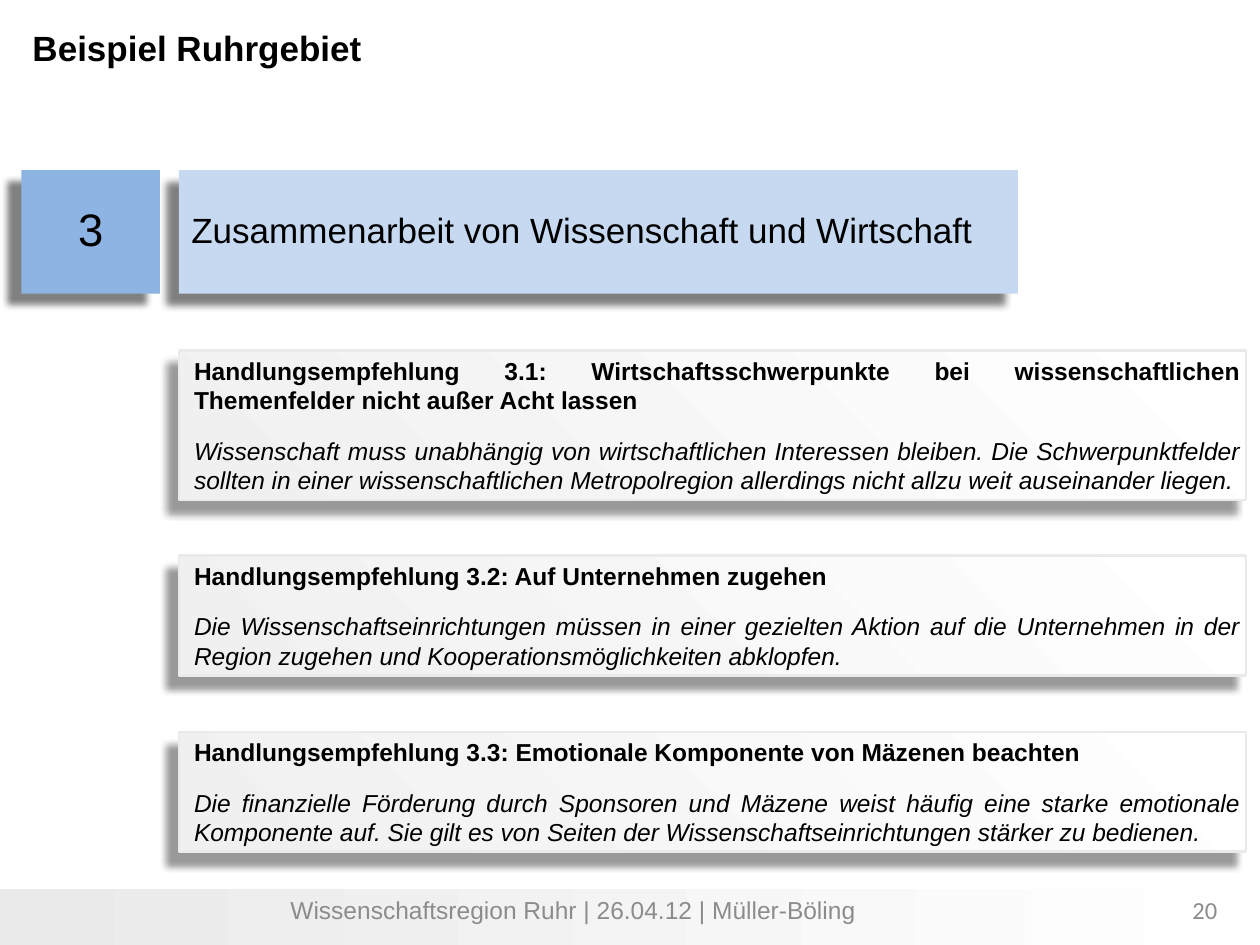
from lxml import etree
from pptx import Presentation
from pptx.dml.color import RGBColor
from pptx.enum import shapes, text
from pptx.oxml import ns
from pptx.util import Inches, Pt

ALIGN = text.PP_ALIGN
RECOMMENDATIONS = [
    (2.78, 1.19,
     "Handlungsempfehlung 3.1: Wirtschaftsschwerpunkte bei wissenschaftlichen "
     "Themenfelder nicht außer Acht lassen",
     "Wissenschaft muss unabhängig von wirtschaftlichen Interessen bleiben. "
     "Die Schwerpunktfelder sollten in einer wissenschaftlichen Metropolregion "
     "allerdings nicht allzu weit auseinander liegen."),
    (4.41, 0.95,
     "Handlungsempfehlung 3.2: Auf Unternehmen zugehen",
     "Die Wissenschaftseinrichtungen müssen in einer gezielten Aktion auf die "
     "Unternehmen in der Region zugehen und Kooperationsmöglichkeiten abklopfen."),
    (5.81, 0.95,
     "Handlungsempfehlung 3.3: Emotionale Komponente von Mäzenen beachten",
     "Die finanzielle Förderung durch Sponsoren und Mäzene weist häufig eine "
     "starke emotionale Komponente auf. Sie gilt es von Seiten der "
     "Wissenschaftseinrichtungen stärker zu bedienen."),
]


def color(value):
    return RGBColor.from_string(value)


def write(para, words, size, align=ALIGN.LEFT, font="Arial", ink="000000",
          bold=False, italic=False):
    para.text = words
    para.alignment = align
    para.font.name = font
    para.font.size = Pt(size)
    para.font.color.rgb = color(ink)
    para.font.bold = bold
    para.font.italic = italic


def add_text(page, area, words, size, **style):
    box = page.shapes.add_textbox(*map(Inches, area))
    box.text_frame.word_wrap = True
    para = box.text_frame.paragraphs[0]
    write(para, words, size, **style)
    return para


def add_rectangle(page, area):
    box = page.shapes.add_shape(shapes.MSO_SHAPE.RECTANGLE, *map(Inches, area))
    box.shadow.inherit = False
    box.line.fill.background()
    box.text_frame.word_wrap = True
    box.text_frame.vertical_anchor = text.MSO_ANCHOR.MIDDLE
    return box


def fill_gradient(box, start, end, angle):
    """Fill from start to end; the angle runs counter-clockwise."""
    box.fill.gradient()
    box.fill.gradient_angle = angle
    for stop, value, position in zip(box.fill.gradient_stops, (start, end), (0, 1)):
        stop.color.rgb = color(value)
        stop.position = position


def add_shadow(box, opacity, direction):
    """Cast a soft black shadow; opacity in percent, direction in degrees."""
    effects = box._element.spPr.find(ns.qn("a:effectLst"))
    shadow = etree.SubElement(
        effects, ns.qn("a:outerShdw"), blurRad=str(Pt(4)), dist=str(Pt(10)),
        dir=str(direction * 60000), algn="tr", rotWithShape="0")
    black = etree.SubElement(shadow, ns.qn("a:srgbClr"), val="000000")
    etree.SubElement(black, ns.qn("a:alpha"), val=str(opacity * 1000))


def add_heading(page, area, fill, words, size, align):
    box = add_rectangle(page, area)
    box.fill.solid()
    box.fill.fore_color.rgb = color(fill)
    add_shadow(box, 49, 140)
    para = box.text_frame.paragraphs[0]
    write(para, words, size, align)
    para.line_spacing = 0.9


def add_recommendation(page, top, height, title, body):
    box = add_rectangle(page, (1.42, top, 8.47, height))
    fill_gradient(box, "F0F0F0", "FFFFFF", 45)
    box.line.color.rgb = color("EAEAEA")
    box.line.width = Pt(1.5)
    add_shadow(box, 40, 135)
    frame = box.text_frame
    frame.margin_left = Inches(0.12)
    frame.margin_top = frame.margin_right = frame.margin_bottom = Inches(0.04)
    write(frame.paragraphs[0], title, 14, ALIGN.JUSTIFY, bold=True)
    write(frame.add_paragraph(), body, 14, ALIGN.JUSTIFY, italic=True)
    for para in frame.paragraphs:
        para.space_after = Pt(12)


def add_footer(page):
    band = add_rectangle(page, (0, 7.06, 10, 0.44))
    fill_gradient(band, "FFFFFF", "EAEAEA", 180)
    add_text(page, (0.16, 7.05, 8.78, 0.52),
             "Wissenschaftsregion Ruhr | 26.04.12 | Müller-Böling", 14,
             align=ALIGN.CENTER, ink="8C8C8C")
    add_text(page, (7.43, 7.05, 2.33, 0.52), "20", 14,
             align=ALIGN.RIGHT, font="Calibri", ink="8C8C8C")


def main():
    deck = Presentation()
    deck.slide_width, deck.slide_height = Inches(10), Inches(7.5)
    page = deck.slides.add_slide(deck.slide_layouts[6])
    add_footer(page)
    title = add_text(page, (0.16, 0.16, 7.5, 0.7), "Beispiel Ruhrgebiet", 20, bold=True)
    title.space_before = Pt(4)
    add_heading(page, (1.42, 1.35, 6.66, 0.98), "C6D9F1",
                "Zusammenarbeit von Wissenschaft und Wirtschaft", 20, ALIGN.LEFT)
    add_heading(page, (0.17, 1.35, 1.1, 0.98), "8EB4E3", "3", 26, ALIGN.CENTER)
    for recommendation in RECOMMENDATIONS:
        add_recommendation(page, *recommendation)
    deck.save("out.pptx")


if __name__ == "__main__":
    main()
